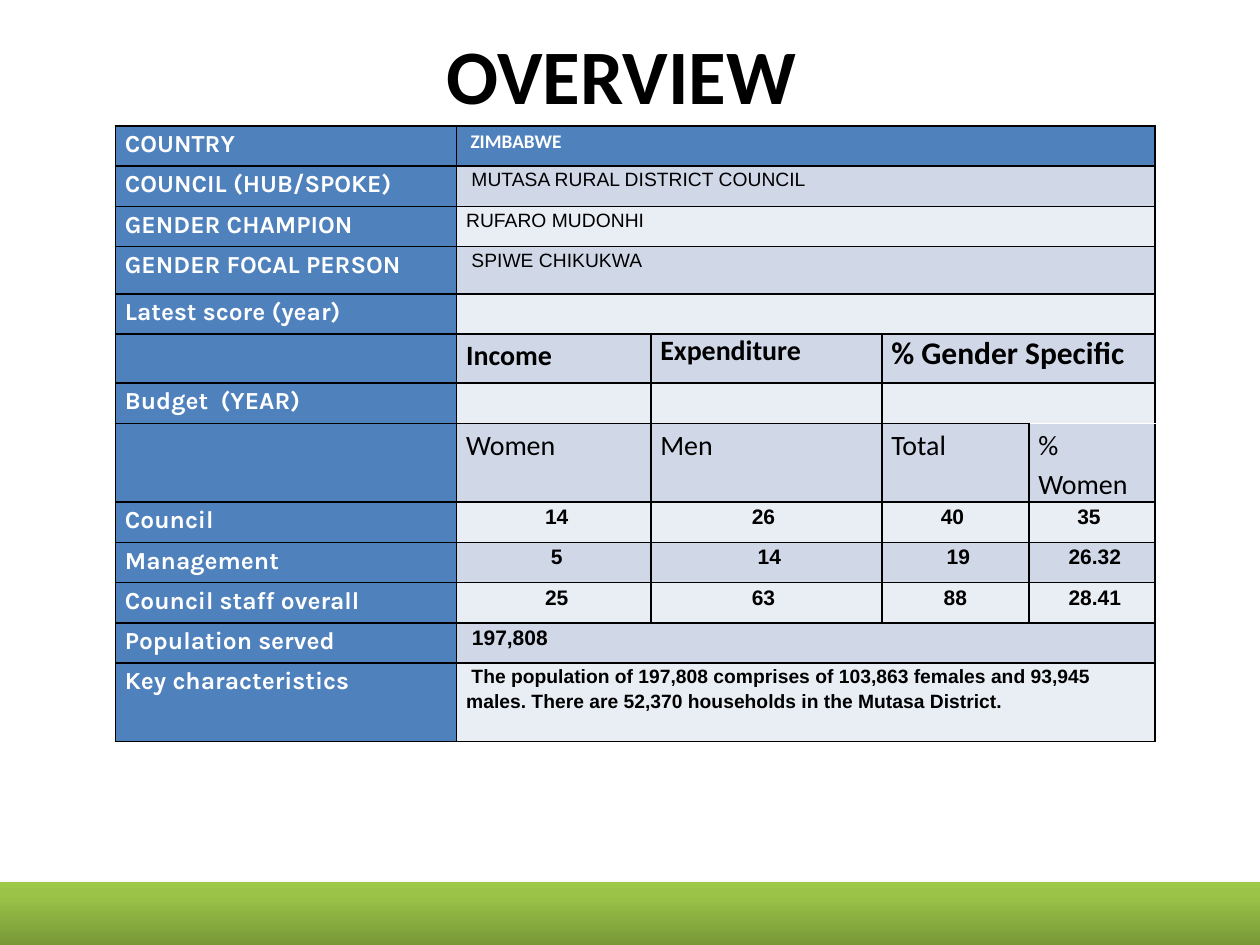
from copy import deepcopy

from lxml.etree import SubElement
from pptx import Presentation
from pptx.dml.color import RGBColor
from pptx.enum.shapes import MSO_SHAPE as SHAPE
from pptx.enum.text import MSO_ANCHOR as ANCHOR, PP_ALIGN as ALIGN
from pptx.oxml.ns import qn
from pptx.util import Pt


def color(hex_text):
    return RGBColor.from_string(hex_text)


def add_border(tc_pr, side, hex_text):
    ln = SubElement(tc_pr, qn("a:ln" + side), w=str(Pt(1)))
    fill = SubElement(ln, qn("a:solidFill"))
    SubElement(fill, qn("a:srgbClr"), val=hex_text)


BLUE, LIGHT, PALE = "4F81BD", "D0D8E8", "E9EDF4"
BLACK, WHITE = "000000", "FFFFFF"

# Text formats: font, color, alignment and line spacing
FORMATS = {
    "label": (dict(name="Karla", size=Pt(14), bold=True), WHITE, ALIGN.LEFT, 1.15),
    "country": (dict(name="Calibri", size=Pt(11), bold=True), WHITE, ALIGN.LEFT, 1.15),
    "name": (dict(name="Arial", size=Pt(11), bold=False), BLACK, ALIGN.LEFT, 1.15),
    "note": (dict(name="Arial", size=Pt(11), bold=True), BLACK, ALIGN.LEFT, 1.15),
    "people": (dict(name="Arial", size=Pt(12), bold=True), BLACK, ALIGN.LEFT, 1.15),
    "count": (dict(name="Arial", size=Pt(12), bold=True), BLACK, ALIGN.CENTER, 1.15),
    "income": (dict(name="Calibri", size=Pt(16), bold=True), BLACK, ALIGN.LEFT, 1.15),
    "expense": (dict(name="Calibri", size=Pt(16), bold=True), BLACK, ALIGN.LEFT, 1),
    "share": (dict(name="Calibri", size=Pt(18), bold=True), BLACK, ALIGN.LEFT, 1),
    "group": (dict(name="Calibri", size=Pt(16), bold=False), BLACK, ALIGN.LEFT, 1.15),
}

# Each row: height, label, formats of the other cells, their texts
ROWS = [
    (23, "COUNTRY", ["country"], [" ZIMBABWE"]),
    (23, "COUNCIL (HUB/SPOKE)", ["name"], [" MUTASA RURAL DISTRICT COUNCIL"]),
    (23, "GENDER CHAMPION", ["name"], ["RUFARO MUDONHI"]),
    (27, "GENDER FOCAL PERSON", ["name"], [" SPIWE CHIKUKWA"]),
    (23, "Latest score (year)", ["name"], [""]),
    (28, "", ["income", "expense", "share"],
     ["Income", "Expenditure", "% Gender Specific"]),
    (23, "Budget  (YEAR)", ["name"] * 3, ["", "", ""]),
    (45, "", ["group"] * 4, ["Women", "Men", "Total", "% Women"]),
    (23, "Council", ["count"] * 4, [" 14", "26 ", "40 ", "35 "]),
    (23, "Management", ["count"] * 4, [" 5", " 14", " 19", " 26.32"]),
    (23, "Council staff overall", ["count"] * 4, [" 25", "63 ", "88", " 28.41"]),
    (23, "Population served", ["people"], [" 197,808"]),
    (45, "Key characteristics", ["note"],
     [" The population of 197,808 comprises of 103,863 females and 93,945 males. "
      "There are 52,370 households in the Mutasa District."]),
]
COL_WIDTHS = [195, 111, 132, 84, 72]
GROUP_ROW = 7

prs = Presentation()
prs.slide_width, prs.slide_height = Pt(720), Pt(540)
slide = prs.slides.add_slide(prs.slide_layouts[5])

# Title
title = slide.shapes.title
title.left, title.top, title.width, title.height = Pt(36), Pt(12), Pt(648), Pt(60)
tf = title.text_frame
tf.text = "OVERVIEW "
tf.vertical_anchor = ANCHOR.MIDDLE
p = tf.paragraphs[0]
p.alignment = ALIGN.CENTER
font = p.runs[0].font
font.name, font.size, font.bold = "Calibri", Pt(44), True
font.color.rgb = color(BLACK)

# Overview table
table = slide.shapes.add_table(
    len(ROWS), len(COL_WIDTHS), Pt(66), Pt(72),
    Pt(sum(COL_WIDTHS)), Pt(sum(row[0] for row in ROWS))).table
table.first_row = table.horz_banding = False
for column, width in zip(table.columns, COL_WIDTHS):
    column.width = Pt(width)

for i, (height, label, formats, texts) in enumerate(ROWS):
    table.rows[i].height = Pt(height)

    # Borders and fills
    for j in range(len(COL_WIDTHS)):
        cell = table.cell(i, j)
        cell.margin_left = cell.margin_right = Pt(5.4)
        cell.margin_top = cell.margin_bottom = 0
        tc_pr = cell._tc.get_or_add_tcPr()
        for side in "LRTB":
            white_top = (i, j, side) == (GROUP_ROW, 4, "T")
            add_border(tc_pr, side, WHITE if white_top else BLACK)
        cell.fill.solid()
        band = LIGHT if i % 2 else PALE
        cell.fill.fore_color.rgb = color(BLUE if j == 0 or i == 0 else band)

    # The last cell reaches to the right edge
    if len(texts) < 4:
        table.cell(i, len(texts)).merge(table.cell(i, 4))

    # Text
    for j, (key, text) in enumerate(zip(["label"] + formats, [label] + texts)):
        if not text:
            continue
        font_values, hex_text, align, spacing = FORMATS[key]
        p = table.cell(i, j).text_frame.paragraphs[0]
        p.alignment, p.line_spacing = align, spacing
        r = p.add_run()
        r.text = text
        for attr, value in font_values.items():
            setattr(r.font, attr, value)
        r.font.color.rgb = color(hex_text)

# Green footer band
s = slide.shapes.add_shape(SHAPE.RECTANGLE, 0, Pt(504), Pt(735), Pt(36.5))
s.line.fill.background()
s.fill.gradient()
s.fill.gradient_angle = 90
stop_list = s._element.spPr.find(".//" + qn("a:gsLst"))
stop_list.append(deepcopy(stop_list[-1]))
stops = [(0, "779737"), (0.8, "9BC348"), (1, "9DC746")]
for stop, (position, hex_text) in zip(s.fill.gradient_stops, stops):
    stop.position = position
    stop.color.rgb = color(hex_text)

# Soft shadow of the band
s.shadow.inherit = False
effects = s._element.spPr.find(qn("a:effectLst"))
shadow = SubElement(effects, qn("a:outerShdw"), blurRad=str(Pt(3.1)),
                    dist=str(Pt(1.8)), dir="5400000", rotWithShape="0")
shade = SubElement(shadow, qn("a:srgbClr"), val=BLACK)
SubElement(shade, qn("a:alpha"), val="35000")

prs.save("out.pptx")
